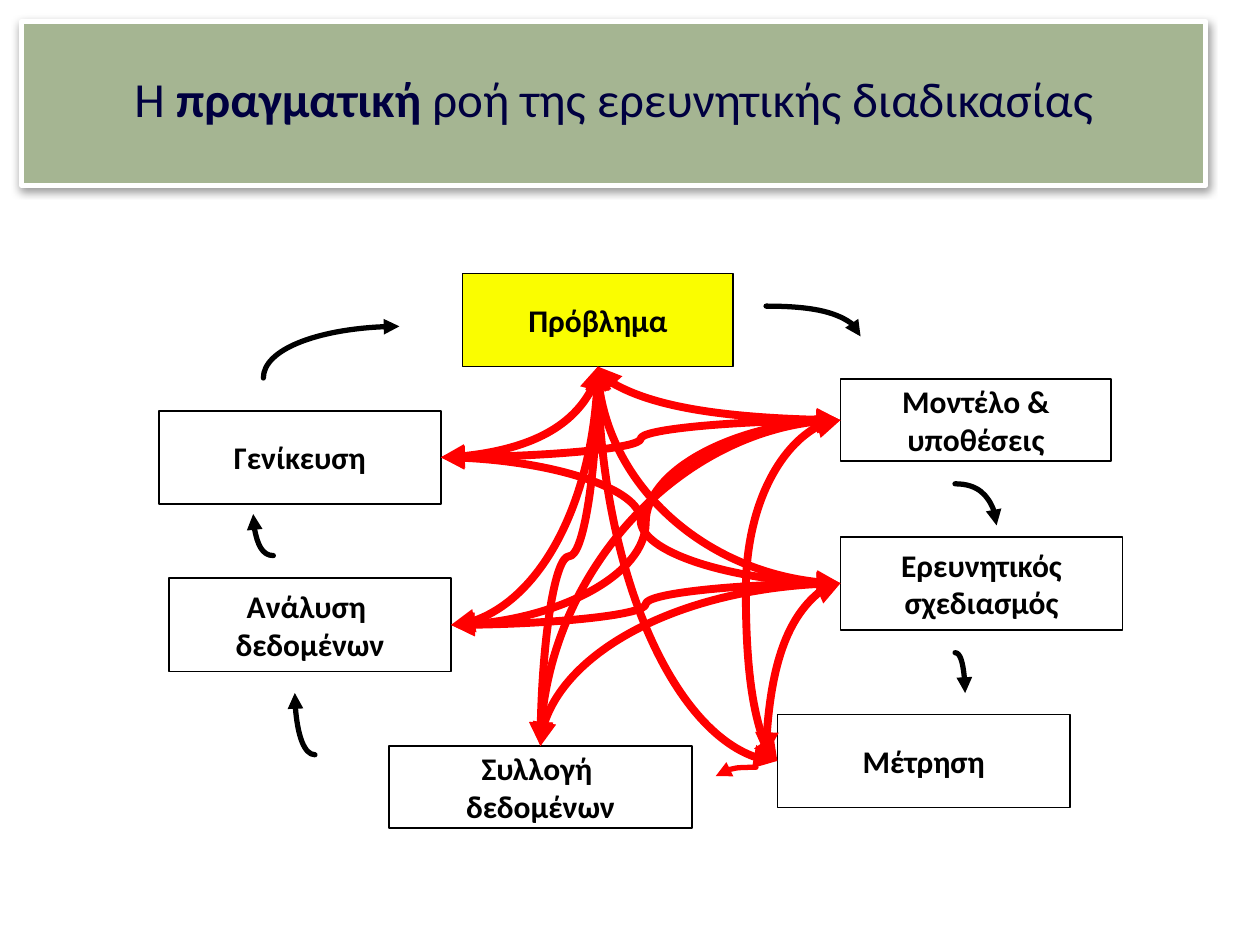
import pptx
import pptx.dml.color
import pptx.enum.shapes
import pptx.enum.text
import pptx.oxml
import pptx.oxml.ns
import pptx.util
from pptx.util import Inches

BLACK, WHITE, RED = "000000", "FFFFFF", "FF0000"
TOP, LEFT, BASE, RIGHT = range(4)


def hue(code):
    """Turn a hex string into a colour."""
    return pptx.dml.color.RGBColor.from_string(code)


def add_xml(node, text):
    """Append an element of the drawing namespace to a node."""
    space = pptx.oxml.ns.nsdecls("a")
    node.append(pptx.oxml.parse_xml(text.replace(">", f" {space}>", 1)))


def set_line(line, code, width):
    """Set the colour and width of a line."""
    line.color.rgb = hue(code)
    line.width = pptx.util.Pt(width)


def add_heads(shape, *ends):
    """Put triangle heads on the named ends of a line."""
    props = shape._element.spPr.find(pptx.oxml.ns.qn("a:ln"))
    for end in ends:
        add_xml(props, f'<a:{end} type="triangle"></a:{end}>')
    return props


def add_box(slide, text, place, fill=WHITE, edge=BLACK, width=1):
    """Draw a framed rectangle with centred text."""
    kind = pptx.enum.shapes.MSO_SHAPE.RECTANGLE
    box = slide.shapes.add_shape(kind, *map(Inches, place))
    box.shadow.inherit = False
    if fill:
        box.fill.solid()
        box.fill.fore_color.rgb = hue(fill)
    else:
        box.fill.background()
    set_line(box.line, edge, width)
    frame = box.text_frame
    frame.word_wrap = False
    frame.vertical_anchor = pptx.enum.text.MSO_ANCHOR.MIDDLE
    frame.text = text
    for para in frame.paragraphs:
        para.alignment = pptx.enum.text.PP_ALIGN.CENTER
        for run in para.runs:
            style(run, 18, BLACK, True)
    return box


def style(run, size, code, bold):
    """Set the font of a run."""
    font = run.font
    font.name, font.size, font.bold = "Calibri", pptx.util.Pt(size), bold
    font.color.rgb = hue(code)


def add_title(slide):
    """Draw the title band with its shadow."""
    band = add_box(slide, "", (0.17, 0.17, 9.4, 1.3), "A5B592", WHITE, 3)
    band.text_frame.word_wrap = True
    para = band.text_frame.paragraphs[0]
    para.line_spacing = 0.8
    parts = ["Η ", "πραγματική", " ροή της ερευνητικής διαδικασίας"]
    for spot, text in enumerate(parts):
        run = para.add_run()
        run.text = text
        style(run, 28, "000040", spot == 1)
    props = band._element.spPr.find(pptx.oxml.ns.qn("a:effectLst"))
    add_xml(props, '<a:outerShdw blurRad="63500" dist="20000" dir="5400000" rotWithShape="0">'
                   '<a:srgbClr val="000000"><a:alpha val="38000"/></a:srgbClr></a:outerShdw>')


def add_arc(slide, start, end, code=BLACK, rise=False):
    """Draw a quarter arc that sets off flat, or upright if rise is true."""
    build = slide.shapes.build_freeform(*map(Inches, start))
    build.add_line_segments([tuple(map(Inches, end))], close=False)
    arc = build.convert_to_shape()
    bend(arc, rise)
    arc.shadow.inherit = False
    arc.fill.background()
    set_line(arc.line, code, 3)
    add_heads(arc, "tailEnd").set("cap", "rnd")


def bend(arc, rise):
    """Bend the one straight segment of an outline to a quarter arc."""
    name = pptx.oxml.ns.qn
    route = next(arc._element.iter(name("a:path")))
    (x, y), (far_x, far_y) = [(int(spot.get("x")), int(spot.get("y")))
                              for spot in route.iter(name("a:pt"))]
    wide, high = far_x - x, far_y - y
    shares = [(0, 0.55), (0.45, 1)] if rise else [(0.55, 0), (1, 0.45)]
    spots = "".join(f'<a:pt x="{round(x + wide * a)}" y="{round(y + high * b)}"/>'
                    for a, b in shares + [(1, 1)])
    route.remove(route.find(name("a:lnTo")))
    add_xml(route, f"<a:cubicBezTo>{spots}</a:cubicBezTo>")


def add_curve(slide, start, end, bends=2, bulge=None):
    """Draw a red curve with two heads between box sides."""
    kind = pptx.enum.shapes.MSO_CONNECTOR.CURVE
    curve = slide.shapes.add_connector(kind, 0, 0, 0, 0)
    curve.begin_connect(*start)
    if isinstance(end[0], float):
        curve.end_x, curve.end_y = map(Inches, end)
    else:
        curve.end_connect(*end)
    props = curve._element.spPr
    shape = props.find(pptx.oxml.ns.qn("a:prstGeom"))
    shape.set("prst", f"curvedConnector{bends}")
    if bulge:
        add_xml(shape[0], f'<a:gd name="adj1" fmla="val {round(bulge * 100000)}"></a:gd>')
    set_line(curve.line, RED, 4.5)
    add_heads(curve, "headEnd", "tailEnd")
    add_xml(props, "<a:effectLst></a:effectLst>")
    return curve


def turn_down(curve):
    """Turn a curve that runs down and left so that it sets off upright."""
    wide, high = curve.width, curve.height
    shift = (high - wide) // 2
    curve.left, curve.top = curve.left - shift, curve.top + shift
    curve.width, curve.height = high, wide
    frame = curve._element.spPr.find(pptx.oxml.ns.qn("a:xfrm"))
    frame.set("flipH", "0")
    frame.set("rot", "5400000")


def main():
    """Build the slide and save it."""
    deck = pptx.Presentation()
    deck.slide_width, deck.slide_height = Inches(10), Inches(7.5)
    slide = deck.slides.add_slide(deck.slide_layouts[6])
    add_title(slide)
    topic = add_box(slide, "Πρόβλημα", (3.67, 2.17, 2.15, 0.74), "FAFD00")
    model = add_box(slide, "Μοντέλο &\nυποθέσεις", (6.67, 3.01, 2.15, 0.65), None)
    plan = add_box(slide, "Ερευνητικός\nσχεδιασμός", (6.67, 4.26, 2.24, 0.74))
    gauge = add_box(slide, "Μέτρηση", (6.17, 5.67, 2.32, 0.74))
    data = add_box(slide, "Συλλογή \nδεδομένων", (3.09, 5.92, 2.4, 0.65))
    study = add_box(slide, "Ανάλυση \nδεδομένων", (1.34, 4.59, 2.24, 0.74))
    sum_up = add_box(slide, "Γενίκευση", (1.26, 3.26, 2.24, 0.74))

    for start, end in [((6.08, 2.43), (6.83, 2.67)), ((7.58, 3.84), (7.91, 4.17)),
                       ((7.58, 5.18), (7.66, 5.5)), ((2.5, 5.99), (2.34, 5.5)),
                       ((2.17, 4.41), (2.01, 4.08))]:
        add_arc(slide, start, end)
    add_arc(slide, (2.09, 3), (3.17, 2.59), rise=True)
    add_arc(slide, (6, 6.09), (5.68, 6.16), RED)

    for side in [(plan, LEFT), (gauge, LEFT), (study, RIGHT),
                 (sum_up, RIGHT), (model, LEFT)]:
        add_curve(slide, side, (topic, BASE))
    turn_down(add_curve(slide, (topic, BASE), (data, TOP), 3, 0.5))
    for box in (model, plan):
        add_curve(slide, (box, LEFT), (data, TOP))
        for goal in (study, sum_up):
            add_curve(slide, (box, LEFT), (goal, RIGHT), 3, 0.5)
    add_curve(slide, (model, LEFT), (gauge, LEFT), 3, 1.5)
    add_curve(slide, (plan, LEFT), (6.08, 6.0))
    deck.save("out.pptx")


if __name__ == "__main__":
    main()
